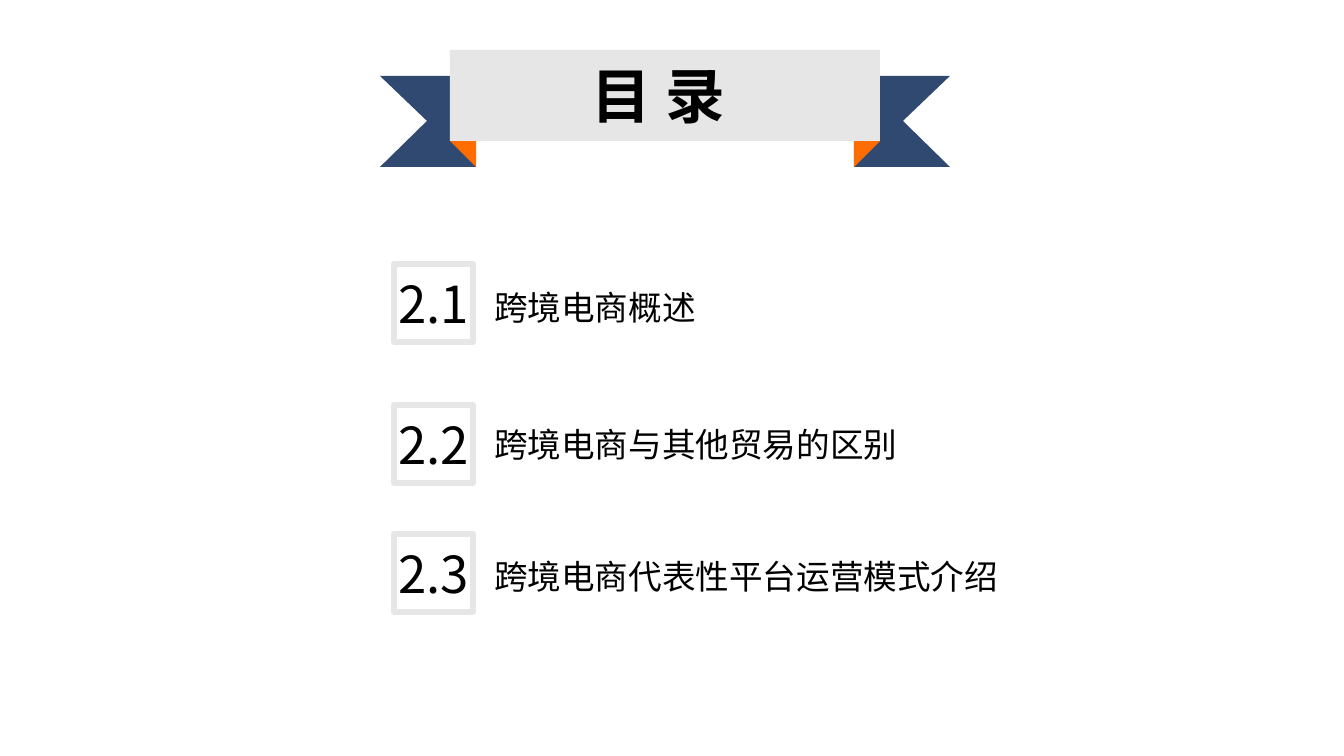
from lxml.etree import SubElement
from pptx import Presentation
from pptx.dml.color import RGBColor
from pptx.enum.shapes import MSO_SHAPE
from pptx.enum.text import MSO_ANCHOR, PP_ALIGN
from pptx.oxml.ns import qn
from pptx.util import Pt

PX = 914400 / 134.4
FONT = "Noto Sans CJK SC"
NAVY = RGBColor(0x30, 0x49, 0x71)
ORANGE = RGBColor(0xFF, 0x6C, 0x00)
GREY = RGBColor(0xE7, 0xE6, 0xE6)
BLACK = RGBColor(0, 0, 0)


def px(*lengths):
    """Turn pixel lengths into EMU."""
    return [round(length * PX) for length in lengths]


def paint(shape, color):
    """Give a shape a flat fill without outline or shadow."""
    shape.shadow.inherit = False
    shape.fill.solid()
    shape.fill.fore_color.rgb = color
    shape.line.fill.background()


def add_text(slide, box, text, size, align=PP_ALIGN.LEFT, bold=False, inset=9, wrap=True):
    """Place one line of vertically centred text in a box."""
    frame = slide.shapes.add_textbox(*px(*box)).text_frame
    frame.word_wrap = wrap
    frame.vertical_anchor = MSO_ANCHOR.MIDDLE
    frame.margin_left, frame.margin_right = px(inset, 9)
    frame.margin_top, frame.margin_bottom = px(5, 5)
    paragraph = frame.paragraphs[0]
    paragraph.text = text
    paragraph.alignment = align
    font = paragraph.font
    font.name, font.size, font.bold = FONT, Pt(size), bold
    font.color.rgb = BLACK
    properties = paragraph._p.pPr.find(qn("a:defRPr"))
    SubElement(properties, qn("a:ea")).set("typeface", FONT)


def add_ribbon(slide, left, top, width, height, title):
    """Draw the title ribbon with its two tails and folds."""
    tail, fold, notch = 96, 26, 47
    band_left, band_height = left + tail - fold, height - fold
    tail_top, bottom = top + fold, top + height
    middle = (tail_top + bottom) // 2
    sides = ((left, 1, band_left, 180), (left + width, -1, left + width - tail, 90))
    for outer, direction, fold_left, rotation in sides:
        inner = outer + direction * tail
        builder = slide.shapes.build_freeform(outer, tail_top, scale=PX)
        builder.add_line_segments([
            (inner, tail_top), (inner, bottom), (outer, bottom),
            (outer + direction * notch, middle),
        ])
        paint(builder.convert_to_shape(), NAVY)
        corner = slide.shapes.add_shape(
            MSO_SHAPE.RIGHT_TRIANGLE, *px(fold_left, bottom - fold, fold, fold))
        corner.rotation = rotation
        paint(corner, ORANGE)
    band = slide.shapes.add_shape(
        MSO_SHAPE.RECTANGLE, *px(band_left, top, width - 2 * (tail - fold), band_height))
    paint(band, GREY)
    add_text(slide, (left + 104, top + 2, 349, 86), title, 32, PP_ALIGN.CENTER, bold=True)


def add_entry(slide, left, top, number, label, label_offset):
    """Draw a framed section number with its heading beside it."""
    frame = slide.shapes.add_shape(MSO_SHAPE.RECTANGLE, *px(left, top, 79, 78))
    frame.shadow.inherit = False
    frame.fill.background()
    frame.line.color.rgb = GREY
    frame.line.width = Pt(3)
    add_text(slide, (left - 9, top + 4, 97, 71), number, 27.3, PP_ALIGN.CENTER, wrap=False)
    add_text(slide, (left + 83, top + label_offset, 540, 51), label, 18, inset=17)


def main():
    """Build the contents slide."""
    presentation = Presentation()
    presentation.slide_width, presentation.slide_height = px(1344, 756)
    slide = presentation.slides.add_slide(presentation.slide_layouts[6])
    add_ribbon(slide, 380, 50, 570, 117, "目 录")
    entries = (
        (264, "2.1", "跨境电商概述", 18),
        (405, "2.2", "跨境电商与其他贸易的区别", 14),
        (534, "2.3", "跨境电商代表性平台运营模式介绍", 17),
    )
    for top, number, label, label_offset in entries:
        add_entry(slide, 394, top, number, label, label_offset)
    presentation.save("out.pptx")


if __name__ == "__main__":
    main()
